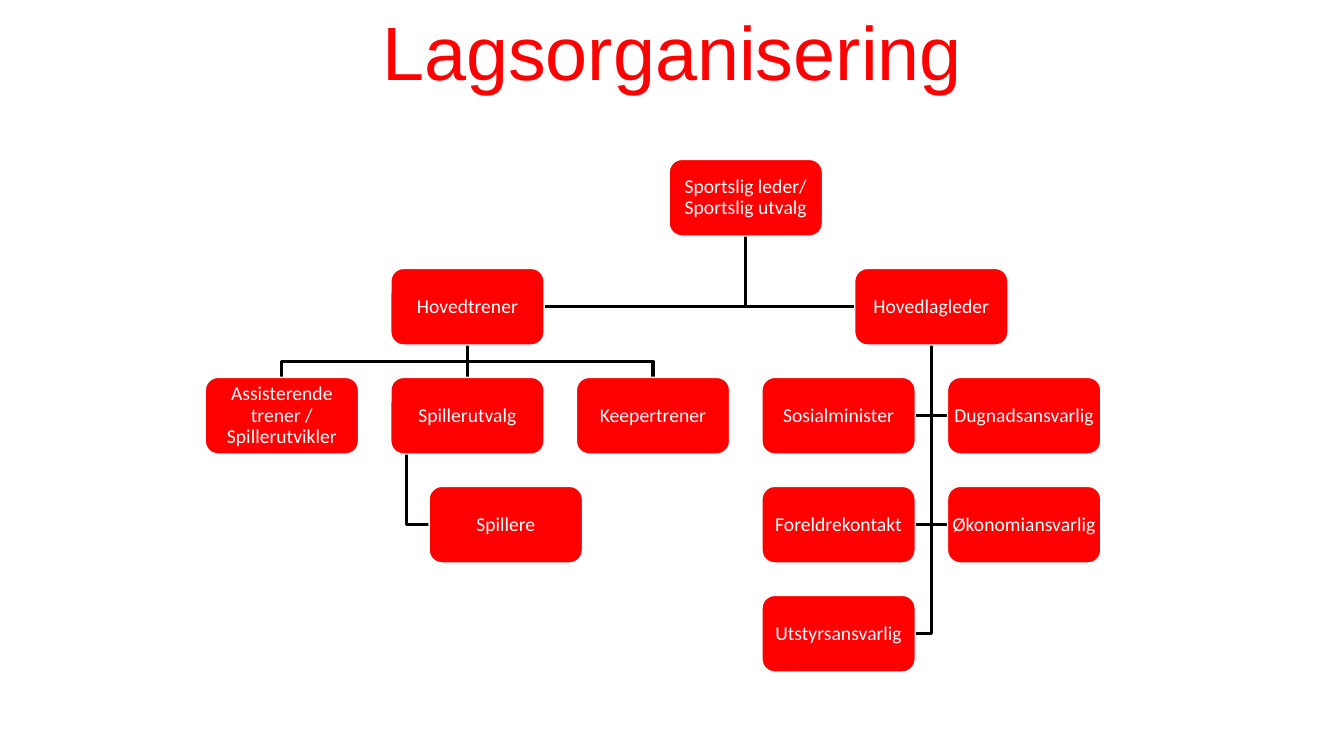
import pptx
import pptx.dml.color
import pptx.enum.shapes
import pptx.enum.text
import pptx.oxml
import pptx.oxml.ns
import pptx.util

Pt = pptx.util.Pt
MSO = pptx.enum.shapes

TITLE = "Lagsorganisering"
ROLES = {
    "leader": ("Sportslig leder/ Sportslig utvalg", 2.5, 0),
    "coach": ("Hovedtrener", 1, 1),
    "assistant": ("Assisterende trener / Spillerutvikler", 0, 2),
    "committee": ("Spillerutvalg", 1, 2),
    "players": ("Spillere", 1, 3),
    "keeper": ("Keepertrener", 2, 2),
    "manager": ("Hovedlagleder", 3.5, 1),
    "social": ("Sosialminister", 3, 2),
    "volunteer": ("Dugnadsansvarlig", 4, 2),
    "parents": ("Foreldrekontakt", 3, 3),
    "finance": ("Økonomiansvarlig", 4, 3),
    "equipment": ("Utstyrsansvarlig", 3, 4),
}
LINKS = [
    ("manager", "equipment", "side"),
    ("manager", "finance", "side"),
    ("manager", "parents", "side"),
    ("manager", "volunteer", "side"),
    ("manager", "social", "side"),
    ("leader", "manager", "side"),
    ("coach", "keeper", "top"),
    ("committee", "players", "hang"),
    ("coach", "committee", "straight"),
    ("coach", "assistant", "top"),
    ("leader", "coach", "side"),
]
INDENTED = {"players"}

THEME = {
    "red": pptx.dml.color.RGBColor(255, 0, 0),
    "white": pptx.dml.color.RGBColor(255, 255, 255),
    "black": pptx.dml.color.RGBColor(0, 0, 0),
    "title": {"name": "Arial", "size": Pt(54)},
    "role": {"name": "Calibri", "size": Pt(14)},
    "border": Pt(1),
    "link": Pt(2.25),
}
SLIDE_W, SLIDE_H = 960, 540
LEFT, TOP = 146.6, 113.9
COL_STEP, ROW_STEP = 132.55, 77.85
BOX_W, BOX_H = 109.5, 54.7
INSET = 0.6


def role_origin(key):
    _, col, row = ROLES[key]
    indent = BOX_W / 4 if key in INDENTED else 0
    return LEFT + col * COL_STEP + indent, TOP + row * ROW_STEP


def link_points(parent, child, kind):
    px, py = role_origin(parent)
    cx, cy = role_origin(child)
    start_x = px + BOX_W / (10 if kind == "hang" else 2)
    bottom = py + BOX_H
    if kind in ("top", "straight"):
        end_x, bus_y = cx + BOX_W / 2, (bottom + cy) / 2
        return [(start_x, bottom), (start_x, bus_y), (end_x, bus_y), (end_x, cy)]
    mid_y = cy + BOX_H / 2
    end_x = cx if cx > start_x else cx + BOX_W
    return [(start_x, bottom), (start_x, mid_y), (end_x, mid_y)]


def set_attrs(obj, values):
    for name, value in values.items():
        setattr(obj, name, value)


def set_line(line, color, width):
    line.color.rgb = color
    line.width = width


def write_text(sp, text, font, color, frame, spacing=1.0):
    tf = sp.text_frame
    set_attrs(tf, {"word_wrap": True, **frame})
    p = tf.paragraphs[0]
    set_attrs(p, {"alignment": pptx.enum.text.PP_ALIGN.CENTER, "line_spacing": spacing})
    r = p.add_run()
    r.text = text
    set_attrs(r.font, font)
    r.font.color.rgb = color


def add_straight(s, points):
    (x1, y1), (x2, y2) = points[0], points[-1]
    c = s.shapes.add_connector(MSO.MSO_CONNECTOR.STRAIGHT, Pt(x1), Pt(y1), Pt(x2), Pt(y2))
    c._element.spPr.append(pptx.oxml.parse_xml(
        "<a:effectLst %s/>" % pptx.oxml.ns.nsdecls("a")))
    set_line(c.line, THEME["black"], THEME["link"])
    return c


def add_elbow(s, points):
    corners = [(Pt(x), Pt(y)) for x, y in points]
    fb = s.shapes.build_freeform(*corners[0])
    fb.add_line_segments(corners[1:], close=False)
    sp = fb.convert_to_shape()
    sp.shadow.inherit = False
    sp.fill.background()
    set_line(sp.line, THEME["black"], THEME["link"])


def add_role(s, key):
    x, y = role_origin(key)
    sp = s.shapes.add_shape(MSO.MSO_SHAPE.ROUNDED_RECTANGLE,
                            Pt(x), Pt(y), Pt(BOX_W), Pt(BOX_H))
    sp.shadow.inherit = False
    sp.fill.solid()
    sp.fill.fore_color.rgb = THEME["red"]
    set_line(sp.line, THEME["white"], THEME["border"])
    frame = {"margin_" + side: Pt(INSET) for side in ("left", "top", "right", "bottom")}
    frame["vertical_anchor"] = pptx.enum.text.MSO_ANCHOR.MIDDLE
    write_text(sp, ROLES[key][0], THEME["role"], THEME["white"], frame, 0.9)
    return sp


def main():
    prs = pptx.Presentation()
    set_attrs(prs, {"slide_width": Pt(SLIDE_W), "slide_height": Pt(SLIDE_H)})
    s = prs.slides.add_slide(prs.slide_layouts[6])

    joined = []
    for parent, child, kind in LINKS:
        points = link_points(parent, child, kind)
        if kind == "straight":
            joined.append((add_straight(s, points), parent, child))
        else:
            add_elbow(s, points)

    boxes = {key: add_role(s, key) for key in ROLES}
    for c, parent, child in joined:
        c.begin_connect(boxes[parent], 2)
        c.end_connect(boxes[child], 0)

    title = s.shapes.add_textbox(0, 0, Pt(SLIDE_W), Pt(72.7))
    write_text(title, TITLE, THEME["title"], THEME["red"],
               {"auto_size": pptx.enum.text.MSO_AUTO_SIZE.SHAPE_TO_FIT_TEXT})
    prs.save("out.pptx")


if __name__ == "__main__":
    main()
